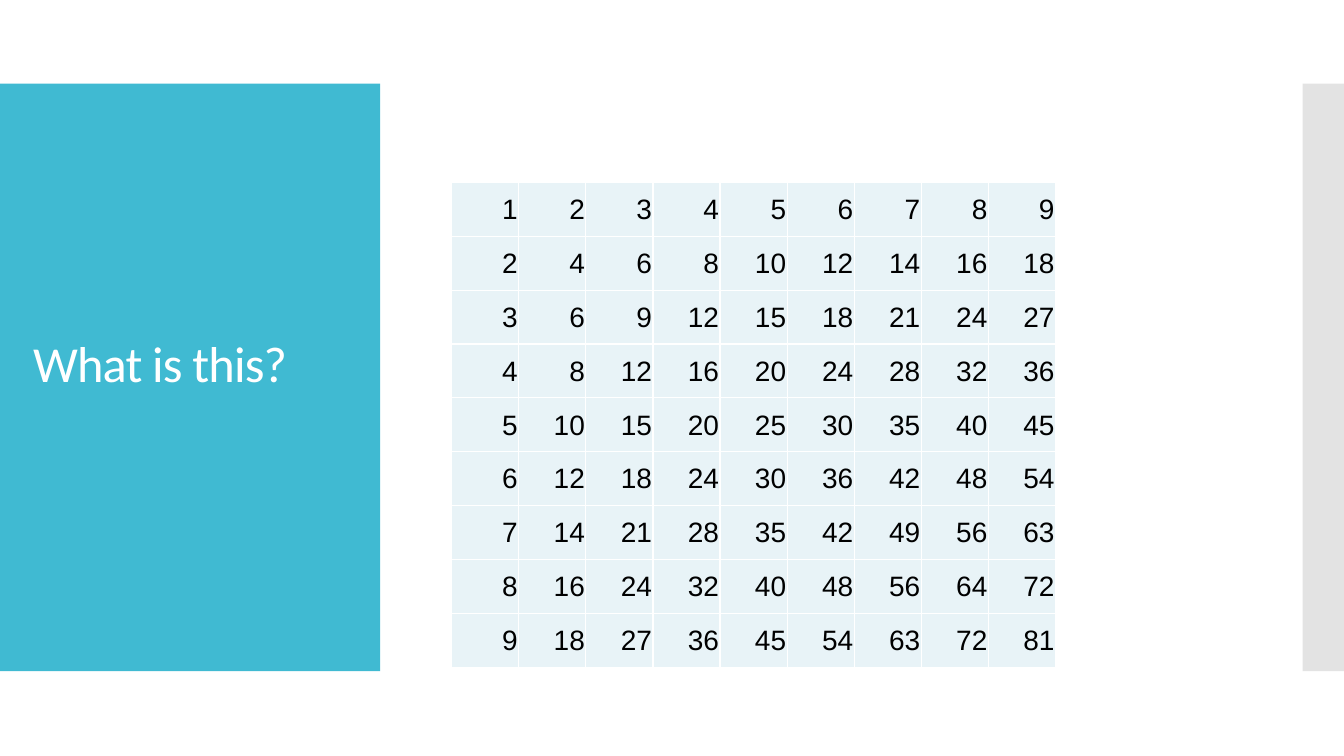
from lxml import etree
from pptx import Presentation
from pptx.dml.color import RGBColor
from pptx.enum.shapes import MSO_SHAPE
from pptx.enum.text import MSO_ANCHOR, PP_ALIGN
from pptx.oxml.ns import qn
from pptx.util import Inches, Pt

RECT = MSO_SHAPE.RECTANGLE
MIDDLE = MSO_ANCHOR.MIDDLE
RIGHT = PP_ALIGN.RIGHT
TEAL = RGBColor(0x40, 0xBA, 0xD2)
GRAY = RGBColor(0xC8, 0xC8, 0xC8)
PALE = RGBColor(0xE8, 0xF3, 0xF7)
WHITE = RGBColor(0xFF, 0xFF, 0xFF)
BLACK = RGBColor(0x00, 0x00, 0x00)
SIZE = 9

deck = Presentation()
deck.slide_width, deck.slide_height = Inches(13.33), Inches(7.5)
slide = deck.slides.add_slide(deck.slide_layouts[6])

# Side panels
for left, width, color in ((0, 3.77, TEAL), (12.92, 0.41, GRAY)):
    panel = slide.shapes.add_shape(
        RECT, Inches(left), Inches(0.83), Inches(width), Inches(5.83))
    panel.shadow.inherit = False
    panel.fill.solid()
    panel.fill.fore_color.rgb = color
    panel.line.fill.background()

# The gray panel is half transparent
tint = panel.fill._xPr.find(qn("a:solidFill"))[0]
etree.SubElement(tint, qn("a:alpha"), val="50000")

# Title
box = slide.shapes.add_textbox(
    Inches(0.23), Inches(1.12), Inches(3.22), Inches(5.03))
frame = box.text_frame
frame.word_wrap = True
frame.vertical_anchor = MIDDLE
title = frame.paragraphs[0]
run = title.add_run()
run.text = "What is this?"
run.font._element.set("spc", "-60")
title.line_spacing = 0.9
title.font.name = "Calibri"
title.font.size = Pt(36)
title.font.color.rgb = WHITE

# Multiplication table
table = slide.shapes.add_table(
    SIZE, SIZE, Inches(4.48), Inches(1.81), Inches(5.99), Inches(4.81)).table
table.first_row = False
table.horz_banding = False
for row in range(SIZE):
    for col in range(SIZE):
        cell = table.cell(row, col)
        cell.text = str((row + 1) * (col + 1))
        cell.vertical_anchor = MIDDLE
        cell.margin_left = cell.margin_right = cell.margin_top = Inches(0.01)
        cell.margin_bottom = 0
        number = cell.text_frame.paragraphs[0]
        number.alignment = RIGHT
        number.font.name = "Arial"
        number.font.size = Pt(20)
        number.font.color.rgb = BLACK

        # White borders come before the fill in the cell properties
        props = cell._tc.get_or_add_tcPr()
        for side in ("a:lnL", "a:lnR", "a:lnT", "a:lnB"):
            line = etree.SubElement(props, qn(side), w=str(Pt(1)))
            paint = etree.SubElement(line, qn("a:solidFill"))
            etree.SubElement(paint, qn("a:srgbClr"), val=str(WHITE))
        cell.fill.solid()
        cell.fill.fore_color.rgb = PALE

deck.save("out.pptx")
